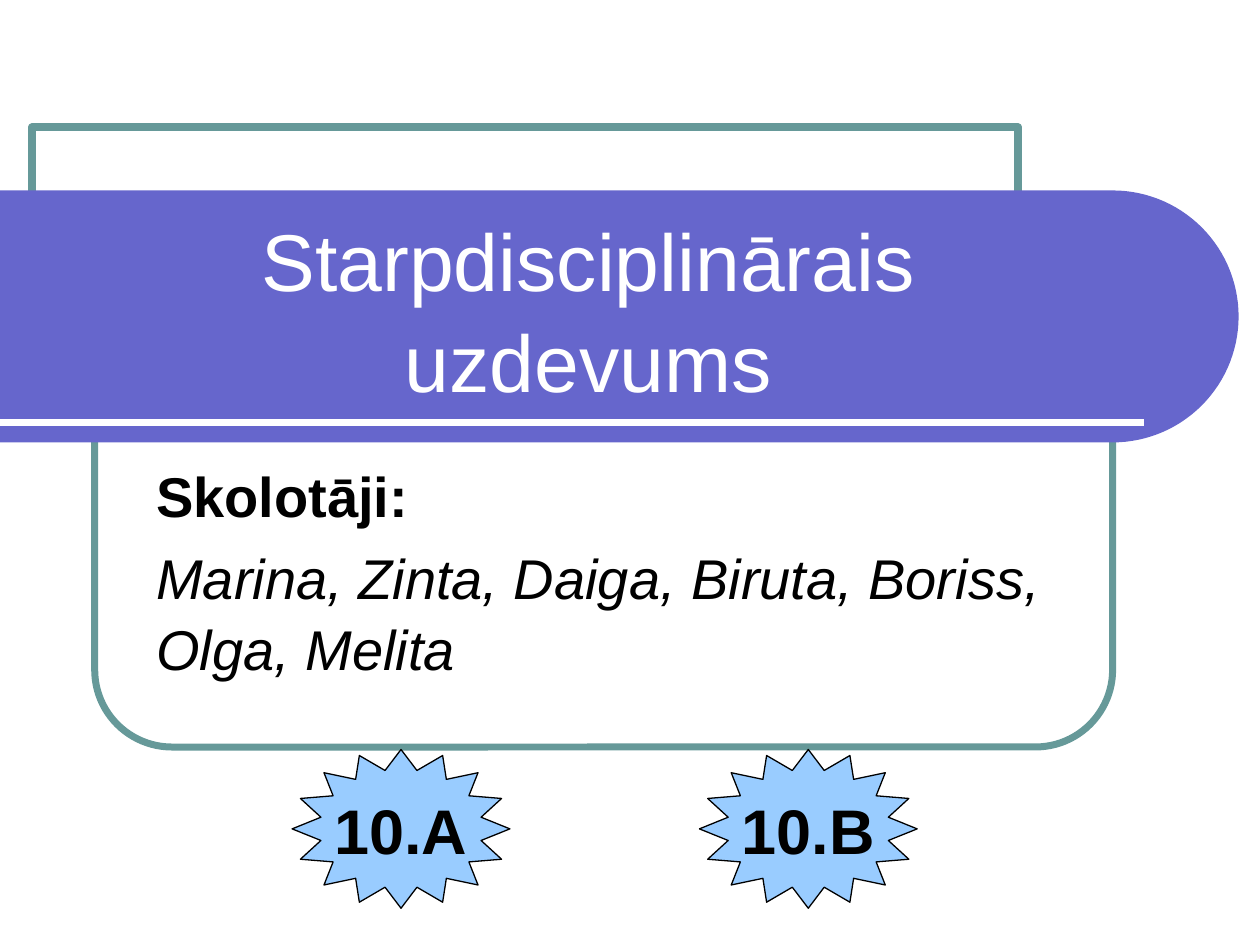
from dataclasses import dataclass
from math import cos, pi, sin

from lxml.etree import SubElement
from pptx import Presentation
from pptx.dml.color import RGBColor
from pptx.enum.shapes import MSO_CONNECTOR as Connector, MSO_SHAPE as Preset
from pptx.enum.text import MSO_ANCHOR as Anchor, PP_ALIGN as Align
from pptx.oxml.ns import qn
from pptx.util import Cm, Pt

COLORS = {
    "white": "FFFFFF",
    "black": "000000",
    "teal": "669999",
    "violet": "6666CC",
    "sky": "99CCFF",
}


@dataclass
class Area:
    left: float
    top: float
    width: float
    height: float

    def lengths(self) -> tuple:
        return Cm(self.left), Cm(self.top), Cm(self.width), Cm(self.height)


@dataclass
class Badge:
    label: str
    left: float


def color(name: str) -> RGBColor:
    return RGBColor.from_string(COLORS[name])


def paint(shape, fill: str = "", line: str = "", weight: float = 1) -> None:
    shape.shadow.inherit = False
    if fill:
        shape.fill.solid()
        shape.fill.fore_color.rgb = color(fill)
    else:
        shape.fill.background()
    if line:
        shape.line.color.rgb = color(line)
        shape.line.width = Pt(weight)
    else:
        shape.line.fill.background()


def write(para, text: str, *, size: float, ink: str = "black", bold: bool = False,
          italic: bool = False, align=Align.LEFT, before: float = 0,
          spacing: float = 1.0) -> None:
    para.text = text
    para.alignment = align
    para.space_before = Pt(before)
    para.line_spacing = spacing
    for span in para.runs:
        span.font.name = "Arial"
        span.font.size = Pt(size)
        span.font.bold = bold
        span.font.italic = italic
        span.font.color.rgb = color(ink)


def add_frame(page, preset, area: Area, fill: str, weight: float):
    frame = page.shapes.add_shape(preset, *area.lengths())
    paint(frame, fill, "teal", weight)
    return frame


def add_band(page, area: Area, steps: int = 60) -> None:
    """Draw a bar from the left edge that ends in a half circle."""
    radius = area.height / 2
    center_x, center_y = area.left + area.width - radius, area.top + radius
    angles = [pi * step / steps - pi / 2 for step in range(steps + 1)]
    points = [(Cm(center_x + radius * cos(a)), Cm(center_y + radius * sin(a)))
              for a in angles]
    points.append((Cm(area.left), Cm(area.top + area.height)))
    builder = page.shapes.build_freeform(Cm(area.left), Cm(area.top), scale=1.0)
    builder.add_line_segments(points, close=True)
    paint(builder.convert_to_shape(), "violet")


def add_rule(page, y: float, end: float) -> None:
    rule = page.shapes.add_connector(Connector.STRAIGHT, 0, Cm(y), Cm(end), Cm(y))
    rule.line.color.rgb = color("white")
    rule.line.width = Pt(4)
    SubElement(rule.element.spPr, qn("a:effectLst"))


def add_badge(page, badge: Badge) -> None:
    star = page.shapes.add_shape(
        Preset.STAR_16_POINT, *Area(badge.left, 15.11, 4.39, 3.2).lengths())
    star.adjustments[0] = 0.375
    paint(star, "sky", "black", 0.75)
    star.text_frame.word_wrap = False
    star.text_frame.vertical_anchor = Anchor.MIDDLE
    write(star.text_frame.paragraphs[0], badge.label, size=36, bold=True,
          align=Align.CENTER)


def main() -> None:
    deck = Presentation()
    deck.slide_width, deck.slide_height = Cm(25.4), Cm(19.05)
    page = deck.slides.add_slide(deck.slide_layouts[5])

    # Frames behind the title band
    rounded = add_frame(page, Preset.ROUNDED_RECTANGLE,
                        Area(1.91, 5.74, 20.52, 9.32), "", 4)
    rounded.adjustments[0] = 0.167
    add_frame(page, Preset.RECTANGLE, Area(0.64, 2.57, 19.89, 2.74), "white", 4.5)

    # Title band with its rule
    add_band(page, Area(0, 3.84, 24.97, 5.08))
    add_rule(page, 8.51, 23.06)

    # Title, brought in front of the band
    title = page.shapes.title
    page.shapes.element.append(title.element)
    title.left, title.top, title.width, title.height = Area(
        0.64, 3.96, 22.43, 4.47).lengths()
    title.text_frame.word_wrap = True
    title.text_frame.vertical_anchor = Anchor.MIDDLE
    write(title.text_frame.paragraphs[0], "Starpdisciplinārais\vuzdevums",
          size=46, ink="white", align=Align.CENTER, spacing=1.05)

    # Teachers
    box = page.shapes.add_textbox(*Area(2.9, 9.12, 18.42, 4.65).lengths())
    box.text_frame.word_wrap = True
    write(box.text_frame.paragraphs[0], "Skolotāji:", size=32, bold=True,
          before=6.4, spacing=1.05)
    write(box.text_frame.add_paragraph(),
          "Marina, Zinta, Daiga, Biruta, Boriss, Olga, Melita",
          size=32, italic=True, before=6.4, spacing=1.05)

    # Class badges
    for badge in (Badge("10.A", 5.89), Badge("10.B", 14.1)):
        add_badge(page, badge)

    deck.save("out.pptx")


if __name__ == "__main__":
    main()
